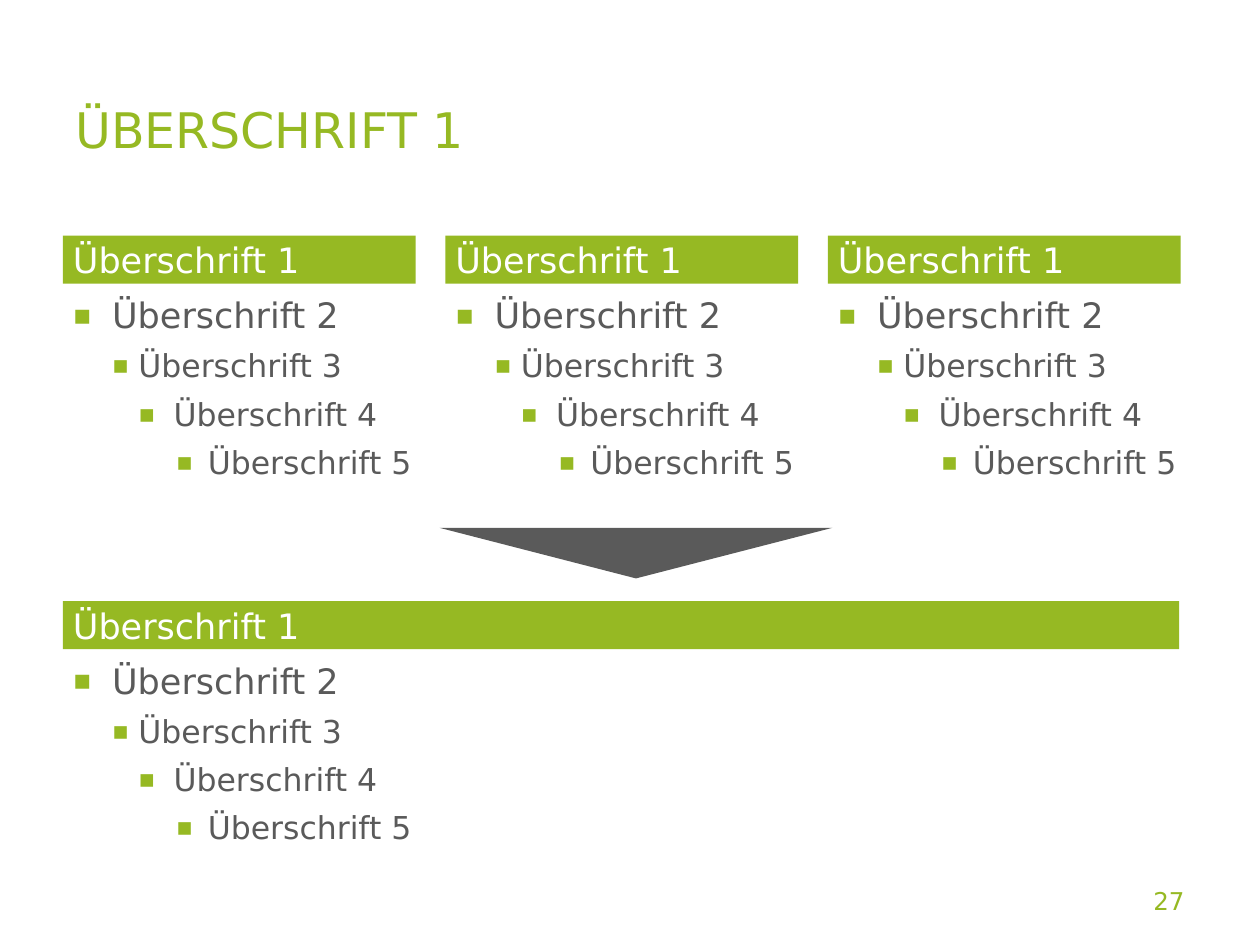
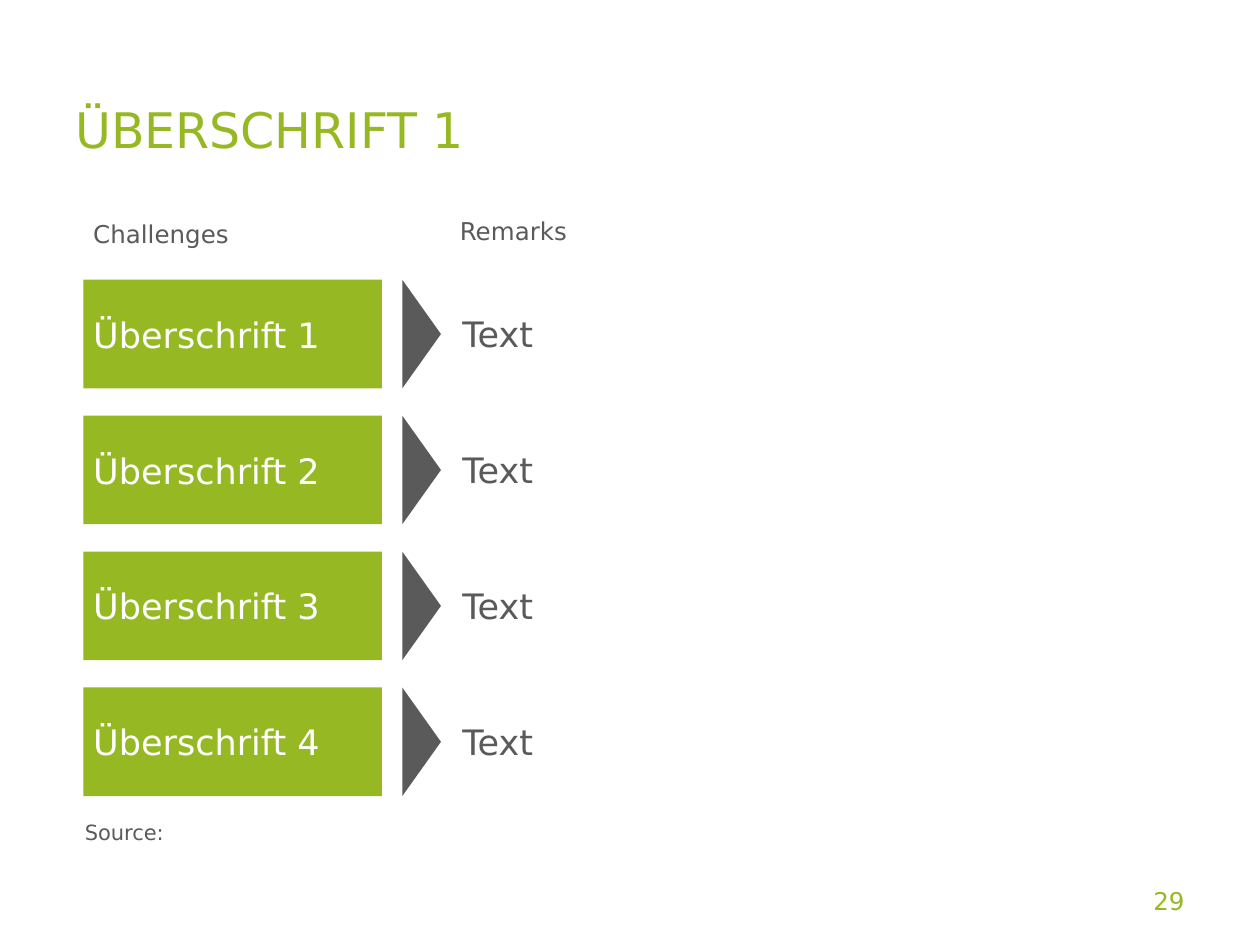
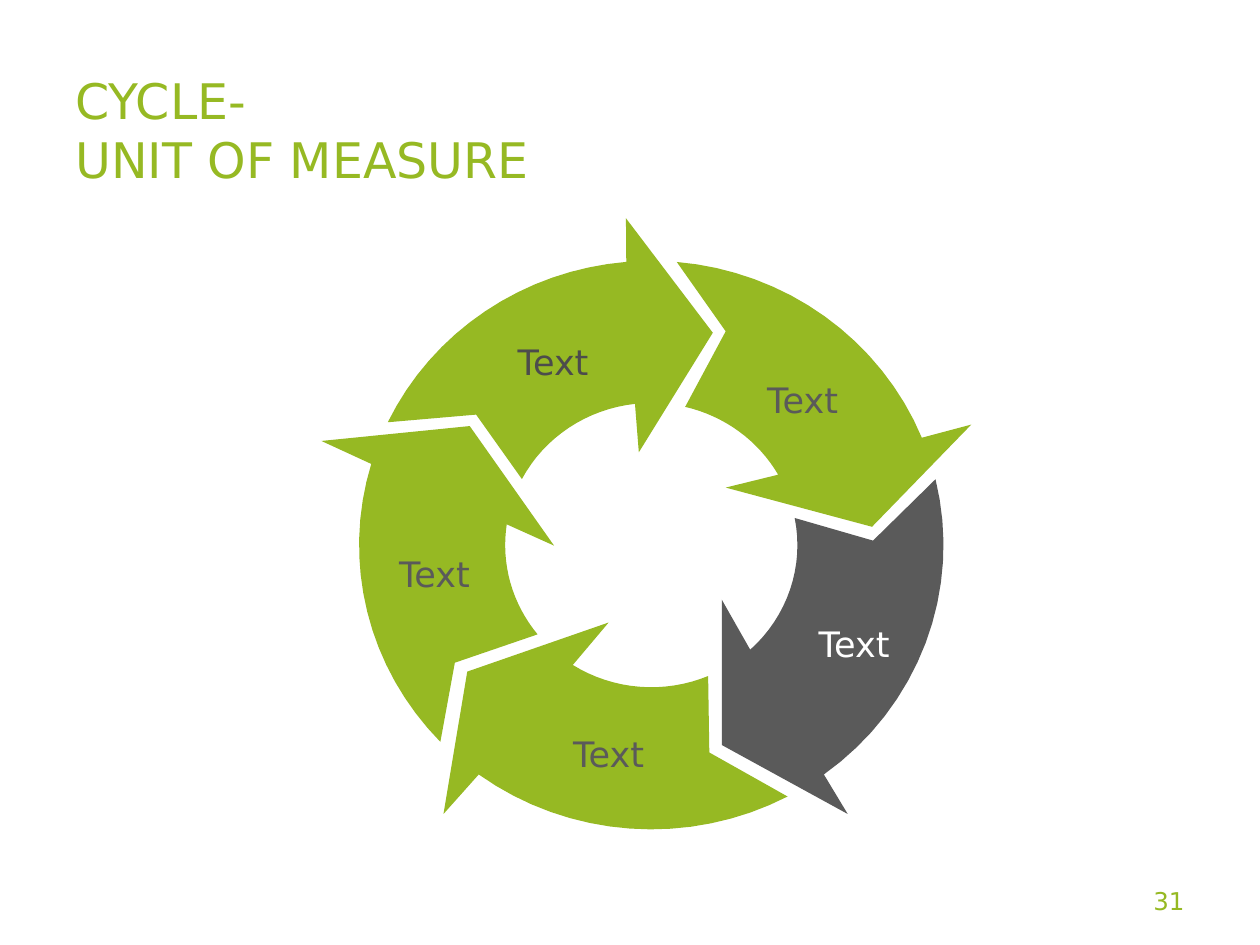
from math import cos, radians, sin
from typing import NamedTuple

from lxml import etree
from pptx import Presentation
from pptx import util as u
from pptx.dml.color import RGBColor
from pptx.enum import shapes, text
from pptx.oxml.ns import qn


class Theme:
    """Colours and type sizes shared by all slides."""
    font = "DejaVu Sans"
    green, grey, dark, white = "96B923", "5A5A5A", "4C4C4C", "FFFFFF"
    title, heading, sublevel, label, source = 28, 20, 18, 14, 12
    inset = 0.2


class Box(NamedTuple):
    """Left, top, width and height in centimetres."""
    left: float
    top: float
    width: float
    height: float

    def inner_box(self, dx, dy, width, height):
        return Box(self.left + dx, self.top + dy, width, height)

    def lengths(self):
        return [u.Cm(value) for value in self]


TITLE_BOX = Box(1.27, 1.27, 16.15, 2.67)
NUMBER_BOX = Box(18.21, 17.65, 5.92, 1.02)
TITLE_ONLY, COMPARISON = 5, 4

# Text, left indent and hanging indent of each list level
LIST_LEVELS = [
    ("Überschrift 2", 0.79, 0.79),
    ("Überschrift 3", 1.32, 0.53),
    ("Überschrift 4", 2.03, 0.71),
    ("Überschrift 5", 2.72, 0.64),
]


class CycleArrow(NamedTuple):
    """Angles run clockwise in degrees; points are cm from the ring's centre."""
    inner: tuple
    head: list
    outer: tuple
    notch: tuple
    label: tuple
    fill: str = Theme.green
    ink: str = Theme.grey


CYCLE_ARROWS = [
    CycleArrow((207.7, 263.6), [(-0.25, -1.87), (1.24, -4.28), (-0.51, -6.59)],
               (265.1, 205.6), (-3.53, -2.63), (-1.98, -3.7), ink=Theme.dark),
    CycleArrow((283.4, 330.3), [(1.5, -1.16), (4.45, -0.37), (6.45, -2.43)],
               (337.8, 275), (1.5, -4.31), (3.05, -2.93)),
    CycleArrow((-11, 47.4), [(1.42, 1.1), (1.42, 4.03), (3.96, 5.42)],
               (53.8, -13.4), (4.47, -0.09), (4.09, 1.99), Theme.grey, Theme.white),
    CycleArrow((67.1, 122.5), [(-0.86, 1.56), (-3.71, 2.55), (-4.19, 5.42)],
               (126.2, 62.2), (1.17, 4.18), (-0.86, 4.2)),
    CycleArrow((141.1, 188.4), [(-1.96, 0.01), (-3.66, -2.4), (-6.65, -2.1)],
               (196.6, 136.2), (-3.96, 2.37), (-4.37, 0.57)),
]


# Shared helpers
def set_all(target, values):
    for name, value in values.items():
        setattr(target, name, value)


def format_frame(frame, anchor, inset):
    set_all(frame, {
        "word_wrap": True, "auto_size": text.MSO_AUTO_SIZE.NONE,
        "vertical_anchor": anchor,
        "margin_left": u.Cm(inset), "margin_right": u.Cm(inset),
        "margin_top": u.Cm(inset), "margin_bottom": u.Cm(inset),
    })


def format_runs(paragraph, size, color):
    for run in paragraph.runs:
        set_all(run.font, {"name": Theme.font, "size": u.Pt(size), "bold": False})
        run.font.color.rgb = RGBColor.from_string(color)


def write(shape, words, size, color, align=text.PP_ALIGN.LEFT,
          anchor=text.MSO_ANCHOR.MIDDLE, inset=Theme.inset):
    format_frame(shape.text_frame, anchor, inset)
    shape.text_frame.text = words
    paragraph = shape.text_frame.paragraphs[0]
    paragraph.alignment = align
    format_runs(paragraph, size, color)


def fill_solid(shape, color):
    shape.fill.solid()
    shape.fill.fore_color.rgb = RGBColor.from_string(color)


def paint(shape, color):
    shape.shadow.inherit = False
    fill_solid(shape, color)
    shape.line.fill.background()


def add_filled(slide, kind, box, color):
    shape = slide.shapes.add_shape(kind, *box.lengths())
    paint(shape, color)
    return shape


def add_label(slide, box, words, size, color=Theme.grey, **options):
    write(slide.shapes.add_textbox(*box.lengths()), words, size, color, **options)


def add_heading(slide, box, words):
    bar = add_filled(slide, shapes.MSO_SHAPE.RECTANGLE, box, Theme.green)
    write(bar, words, Theme.heading, Theme.white)


def move(shape, box):
    set_all(shape, dict(zip(("left", "top", "width", "height"), box.lengths())))


def add_base_slide(presentation, layout, title, number):
    slide = presentation.slides.add_slide(presentation.slide_layouts[layout])
    move(slide.shapes.title, TITLE_BOX)
    write(slide.shapes.title, title, Theme.title, Theme.green, inset=0.25)
    add_label(slide, NUMBER_BOX, number, Theme.label, Theme.green,
              align=text.PP_ALIGN.RIGHT, inset=0.25)
    return slide


# Heading bar above a bulleted list
def add_bullet(paragraph, indent, hanging):
    properties = paragraph._p.get_or_add_pPr()
    properties.set("marL", str(u.Cm(indent)))
    properties.set("indent", str(-u.Cm(hanging)))
    color = etree.SubElement(properties, qn("a:buClr"))
    etree.SubElement(color, qn("a:srgbClr"), val=Theme.green)
    etree.SubElement(properties, qn("a:buSzPct"), val="80000")
    etree.SubElement(properties, qn("a:buFont"), typeface=Theme.font)
    etree.SubElement(properties, qn("a:buChar"), char="▪")


def fill_list(placeholder, box):
    move(placeholder, box)
    fill_solid(placeholder, Theme.white)
    frame = placeholder.text_frame
    format_frame(frame, text.MSO_ANCHOR.TOP, Theme.inset)
    frame.text = "\n".join(words for words, *_ in LIST_LEVELS)
    for level, (paragraph, (_, indent, hanging)) in enumerate(
            zip(frame.paragraphs, LIST_LEVELS)):
        add_bullet(paragraph, indent, hanging)
        set_all(paragraph, {"level": level, "space_before": u.Pt(6 if level else 0)})
        format_runs(paragraph, Theme.sublevel if level else Theme.heading, Theme.grey)


def add_list_panel(slide, placeholder, box, heading_width):
    heading_height = 0.97
    add_heading(slide, box.inner_box(0, 0, heading_width, heading_height),
                "Überschrift 1")
    fill_list(placeholder, box.inner_box(0, heading_height, box.width,
                                         box.height - heading_height))


# Three columns leading to one conclusion
def build_columns_slide(presentation, box):
    slide = add_base_slide(presentation, COMPARISON, "ÜBERSCHRIFT 1", "27")
    *columns, conclusion = list(slide.placeholders)[1:]
    pitch = 7.71
    for index, placeholder in enumerate(columns):
        column = box.inner_box(index * pitch, 0, 7.62, 6.25)
        add_list_panel(slide, placeholder, column, 7.11)
    add_list_panel(slide, conclusion, box.inner_box(0, 7.37, box.width, 5.67), box.width)
    pointer = add_filled(slide, shapes.MSO_SHAPE.ISOSCELES_TRIANGLE,
                         box.inner_box(7.59, 5.89, 7.92, 1.02), Theme.grey)
    pointer.rotation = 180


# Challenges pointing to remarks
def add_challenge_row(slide, box, heading, remark):
    add_heading(slide, box.inner_box(0, 0, 6.02, box.height), heading)
    arrow = add_filled(slide, shapes.MSO_SHAPE.RIGHT_ARROW,
                       box.inner_box(6.43, 0, 0.78, box.height), Theme.grey)
    arrow.adjustments[0], arrow.adjustments[1] = 0.61, 1
    add_label(slide, box.inner_box(7.64, 0.63, 11.63, 0.92), remark, Theme.heading,
              inset=0)


def build_challenges_slide(presentation, box):
    slide = add_base_slide(presentation, TITLE_ONLY, "ÜBERSCHRIFT 1", "29")
    add_label(slide, box.inner_box(0, 0, 6.05, 0.99), "Challenges", Theme.label)
    add_label(slide, box.inner_box(7.39, 0, 11.63, 0.86), "Remarks", Theme.label)
    pitch = 2.74
    for index in range(4):
        row = box.inner_box(0, 1.42 + index * pitch, box.width, 2.19)
        add_challenge_row(slide, row, f"Überschrift {index + 1}", "Text")
    add_label(slide, box.inner_box(0.03, 12.29, 15.93, 0.51), "Source:", Theme.source,
              anchor=text.MSO_ANCHOR.BOTTOM, inset=0)


# Ring of five arrows
def arc(radius_x, radius_y, start, end, steps=16):
    angles = [radians(start + (end - start) * step / steps) for step in range(steps + 1)]
    return [(radius_x * cos(angle), radius_y * sin(angle)) for angle in angles]


def add_cycle_arrow(slide, box, arrow):
    radius_x, radius_y = box.width / 2, box.height / 2
    center_x, center_y = box.left + radius_x, box.top + radius_y
    outline = [*arc(radius_x / 2, radius_y / 2, *arrow.inner), *arrow.head,
               *arc(radius_x, radius_y, *arrow.outer), arrow.notch]
    points = [(u.Cm(center_x + x), u.Cm(center_y + y)) for x, y in outline]
    builder = slide.shapes.build_freeform(*points[0])
    builder.add_line_segments(points[1:], close=True)
    paint(builder.convert_to_shape(), arrow.fill)


def add_cycle_label(slide, box, arrow):
    width, height = 2.44, 0.86
    x, y = arrow.label
    label_box = box.inner_box((box.width - width) / 2 + x, (box.height - height) / 2 + y,
                              width, height)
    add_label(slide, label_box, "Text", Theme.heading, arrow.ink,
              align=text.PP_ALIGN.CENTER, inset=0)


def build_cycle_slide(presentation, box):
    slide = add_base_slide(presentation, TITLE_ONLY, "CYCLE-\vUNIT OF MEASURE", "31")
    for add_piece in (add_cycle_arrow, add_cycle_label):
        for arrow in CYCLE_ARROWS:
            add_piece(slide, box, arrow)


def main():
    presentation = Presentation()
    presentation.slide_width, presentation.slide_height = u.Cm(25.4), u.Cm(19.05)
    build_columns_slide(presentation, Box(1.27, 4.75, 22.5, 13.04))
    build_challenges_slide(presentation, Box(1.68, 4.22, 19.27, 12.8))
    build_cycle_slide(presentation, Box(7.24, 5.26, 11.78, 11.46))
    presentation.save("out.pptx")


if __name__ == "__main__":
    main()
